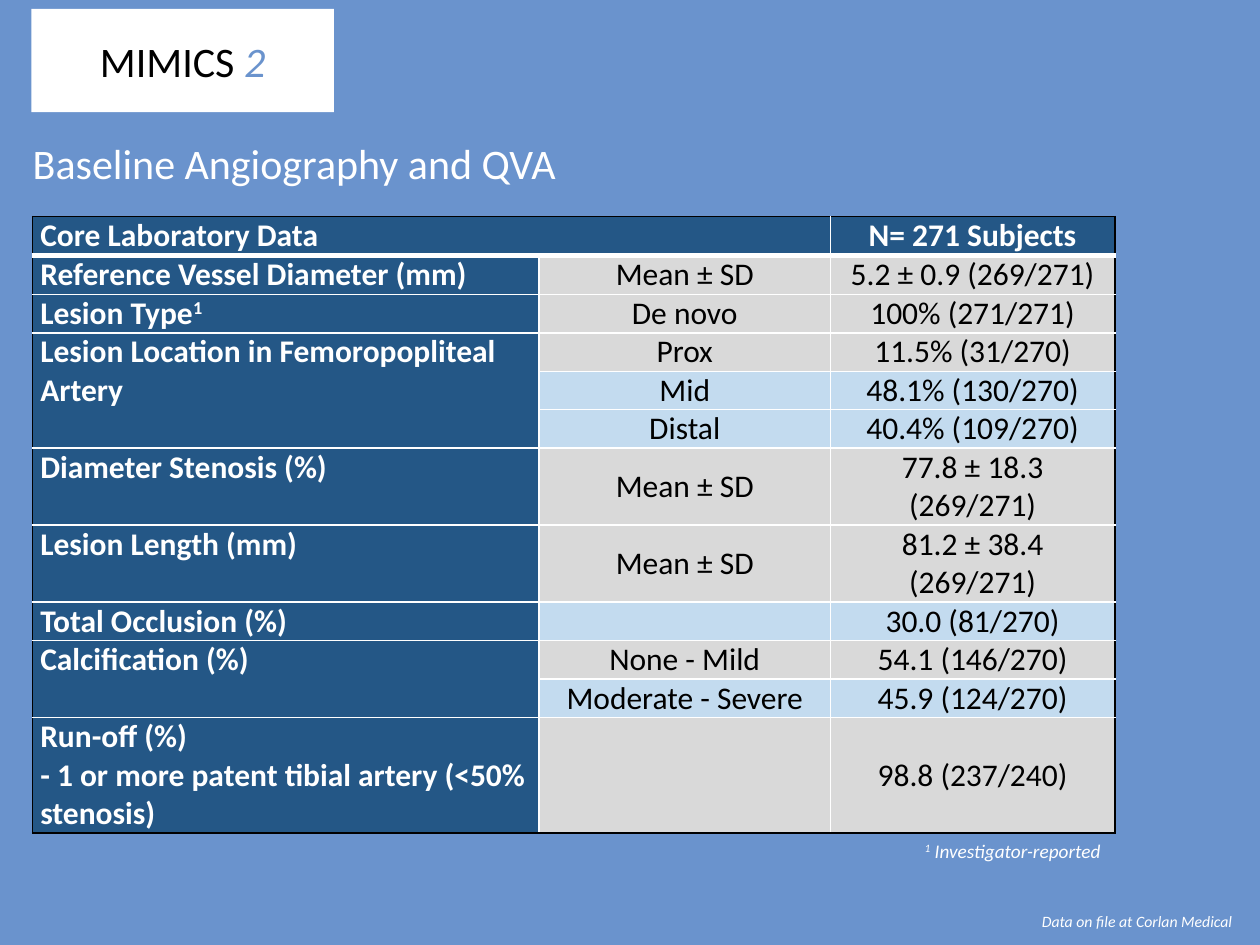
"""Build the baseline angiography slide with its core laboratory table."""
from lxml.etree import SubElement
from pptx import Presentation
from pptx.dml.color import RGBColor
from pptx.enum.shapes import MSO_SHAPE as Shape
from pptx.enum.text import MSO_ANCHOR as Anchor, PP_ALIGN as Align
from pptx.oxml.ns import qn
from pptx.util import Inches, Pt

THEME = {
    "font": "Calibri",
    "sky": "6A93CD", "navy": "245786", "grey": "D9D9D9", "pale": "C3DBEF",
    "white": "FFFFFF", "black": "000000",
    "heading": 24, "body": 18, "note": 11, "source": 9,
}
HEADER = ("Core Laboratory Data", "N= 271 Subjects")
SUPER = {"baseline": 30}
GROUPS = [
    ([["Reference Vessel Diameter (mm)"]], [("Mean ± SD", "5.2 ± 0.9 (269/271)", "grey", 1)]),
    ([["Lesion Type", ("1", SUPER)]], [("De novo", "100% (271/271)", "grey", 1)]),
    ([["Lesion Location in Femoropopliteal Artery"]], [
        ("Prox", "11.5% (31/270)", "grey", 1),
        ("Mid", "48.1% (130/270)", "pale", 1),
        ("Distal", "40.4% (109/270)", "pale", 1)]),
    ([["Diameter Stenosis (%)"]], [("Mean ± SD", "77.8 ± 18.3 (269/271)", "grey", 2)]),
    ([["Lesion Length (mm)"]], [("Mean ± SD", "81.2 ± 38.4 (269/271)", "grey", 2)]),
    ([["Total Occlusion (%)"]], [("", "30.0 (81/270)", "pale", 1)]),
    ([["Calcification (%)"]], [
        ("None - Mild", "54.1 (146/270)", "grey", 1),
        ("Moderate - Severe", "45.9 (124/270)", "pale", 1)]),
    ([["Run-off (%)"], ["- 1 or more patent tibial artery (<50% stenosis)"]],
     [("", "98.8 (237/240)", "grey", 3)]),
]
COLUMNS = (4.02, 2.31, 2.26)
HEADER_HEIGHT, LINE_HEIGHT = 0.31, 0.3


def color(name):
    return RGBColor.from_string(THEME[name])


def write(frame, paragraphs, align=Align.LEFT, spacing=None, **style):
    """Fill a text frame with paragraphs of plain or (text, format) runs."""
    for index, runs in enumerate(paragraphs):
        para = frame.paragraphs[0] if index == 0 else frame.add_paragraph()
        para.alignment = align
        para.line_spacing = spacing
        for run in runs:
            text, extra = (run, {}) if isinstance(run, str) else run
            look = {"size": "body", "ink": "white", "bold": False, "italic": False, **style, **extra}
            span = para.add_run()
            span.text = text
            font = span.font
            font.name, font.size = THEME["font"], Pt(THEME[look["size"]])
            font.bold, font.italic = look["bold"], look["italic"]
            font.color.rgb = color(look["ink"])
            if "baseline" in look:
                font._element.set("baseline", str(look["baseline"] * 1000))


def add_text(page, place, paragraphs, wrap=True, **style):
    box = page.shapes.add_textbox(*map(Inches, place))
    box.text_frame.word_wrap = wrap
    write(box.text_frame, paragraphs, **style)


def add_borders(cell, row, column, last_row):
    edges = {
        "a:lnL": ("black" if column == 0 else "white", 1),
        "a:lnR": ("black" if column == len(COLUMNS) - 1 else "white", 1),
        "a:lnT": ("black" if row == 0 else "white", 1),
        "a:lnB": ("black" if row == last_row else "white", 3 if row == 0 else 1),
    }
    properties = cell._tc.get_or_add_tcPr()
    for tag, (ink, width) in edges.items():
        line = SubElement(properties, qn(tag), w=str(Pt(width)))
        SubElement(SubElement(line, qn("a:solidFill")), qn("a:srgbClr"), val=THEME[ink])


def fill_cell(cell, paragraphs, fill, anchor=Anchor.TOP, **style):
    cell.margin_left = cell.margin_right = Inches(0.06)
    cell.margin_top = cell.margin_bottom = 0
    cell.vertical_anchor = anchor
    cell.fill.solid()
    cell.fill.fore_color.rgb = color(fill)
    write(cell.text_frame, paragraphs, **style)


def add_results(page):
    heights = [HEADER_HEIGHT] + [lines * LINE_HEIGHT for _, rows in GROUPS for *_, lines in rows]
    place = (0.26, 1.72, sum(COLUMNS), sum(heights))
    table = page.shapes.add_table(len(heights), len(COLUMNS), *map(Inches, place)).table
    for column, width in zip(table.columns, COLUMNS):
        column.width = Inches(width)
    for index, height in enumerate(heights):
        table.rows[index].height = Inches(height)
        for column in range(len(COLUMNS)):
            add_borders(table.cell(index, column), index, column, len(heights) - 1)

    title, subjects = HEADER
    fill_cell(table.cell(0, 0), [[title]], "navy", bold=True)
    fill_cell(table.cell(0, 2), [[subjects]], "navy", bold=True, align=Align.CENTER)
    table.cell(0, 0).merge(table.cell(0, 1))

    start = 1
    for label, rows in GROUPS:
        fill_cell(table.cell(start, 0), label, "navy", bold=True)
        for index, (measure, value, fill, _) in enumerate(rows, start):
            for column, text in enumerate((measure, value), 1):
                fill_cell(table.cell(index, column), [[text] if text else []], fill,
                          anchor=Anchor.MIDDLE, align=Align.CENTER, ink="black")
        if len(rows) > 1:
            table.cell(start, 0).merge(table.cell(start + len(rows) - 1, 0))
        start += len(rows)


def add_title(page):
    title = page.shapes.title
    title.left, title.top, title.width, title.height = map(Inches, (0.16, 1.04, 4.98, 0.5))
    title.text_frame.vertical_anchor = Anchor.TOP
    write(title.text_frame, [["Baseline Angiography and QVA"]], size="heading")


def add_study_badge(page):
    badge = page.shapes.add_shape(Shape.RECTANGLE, *map(Inches, (0.25, 0.07, 2.4, 0.82)))
    badge.shadow.inherit = False
    badge.fill.solid()
    badge.fill.fore_color.rgb = color("white")
    badge.line.fill.background()
    badge.text_frame.vertical_anchor = Anchor.MIDDLE
    write(badge.text_frame, [["MIMICS", (" 2", {"ink": "sky", "italic": True})]],
          align=Align.CENTER, size="heading", ink="black")


def main():
    deck = Presentation()
    deck.slide_width, deck.slide_height = Inches(10), Inches(7.5)
    page = deck.slides.add_slide(deck.slide_layouts[5])
    page.background.fill.solid()
    page.background.fill.fore_color.rgb = color("sky")
    add_title(page)
    add_results(page)
    add_text(page, (7.24, 6.61, 1.62, 0.29), [[("1", SUPER), " Investigator-reported"]],
             wrap=False, size="note", italic=True)
    add_text(page, (8.17, 7.2, 2.15, 0.18), [["Data on file at Corlan Medical"]],
             size="source", italic=True, spacing=0.9)
    add_study_badge(page)
    deck.save("out.pptx")


if __name__ == "__main__":
    main()
